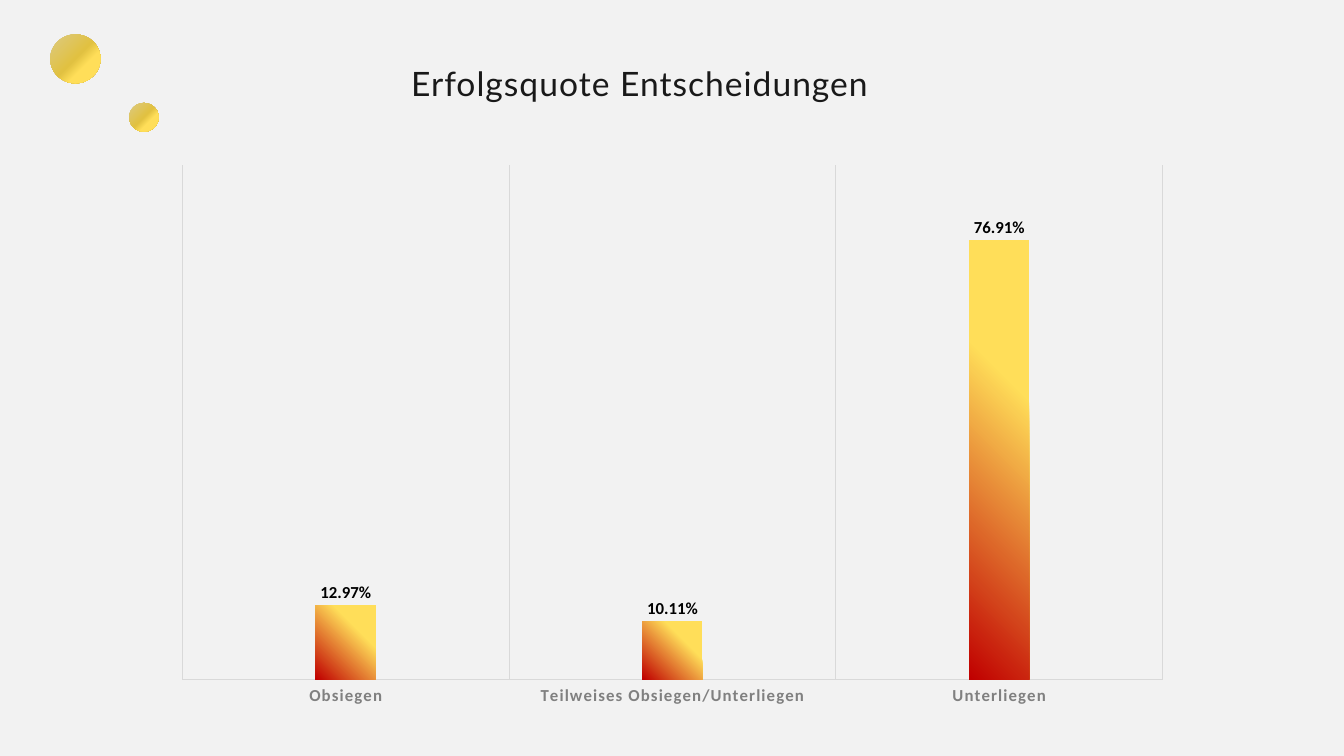
"""Build a slide with a column chart of decision success rates."""
from lxml import etree
from pptx import Presentation
from pptx import util as u
from pptx.chart.data import CategoryChartData
from pptx.dml.color import RGBColor
from pptx.enum import chart as ec, shapes, text
from pptx.oxml import parse_xml
from pptx.oxml.ns import nsdecls, qn


def color(code):
    return RGBColor.from_string(code)


def shade(props, stops, kind):
    for tag in ("a:solidFill", "a:gradFill", "a:noFill"):
        for old in props.findall(qn(tag)):
            props.remove(old)
    marks = "".join(f'<a:gs pos="{pos * 1000}"><a:srgbClr val="{code}"/></a:gs>'
                    for pos, code in stops)
    grad = parse_xml(f'<a:gradFill {nsdecls("a")} rotWithShape="1">'
                     f'<a:gsLst>{marks}</a:gsLst>{kind}</a:gradFill>')
    geom = props.find(qn("a:prstGeom"))
    props.insert(0 if geom is None else props.index(geom) + 1, grad)


prs = Presentation()
prs.slide_width, prs.slide_height = u.Cm(50.8), u.Cm(28.58)
slide = prs.slides.add_slide(prs.slide_layouts[5])
back = slide.background.fill
back.solid()
back.fore_color.rgb = color("F2F2F2")

data = CategoryChartData(number_format="0.00%")
data.categories = ["Obsiegen", "Teilweises Obsiegen/Unterliegen", "Unterliegen"]
data.add_series("Series 1", [0.1297, 0.1011, 0.7691])
chart = slide.shapes.add_chart(ec.XL_CHART_TYPE.COLUMN_CLUSTERED, u.Cm(6.4), u.Cm(5.51),
                               u.Cm(38), u.Cm(21.69), data).chart
chart.has_legend = chart.has_title = False

plot = chart.plots[0]
plot.gap_width, plot.overlap, plot.vary_by_categories = 444, -90, False
plot.has_data_labels = True
labels = plot.data_labels
look = {"show_value": True, "position": ec.XL_LABEL_POSITION.OUTSIDE_END,
        "number_format": "0.00%", "number_format_is_linked": False}
for key, val in look.items():
    setattr(labels, key, val)

cat, axis = chart.category_axis, chart.value_axis
cat.major_tick_mark = ec.XL_TICK_MARK.NONE
cat.tick_label_position = ec.XL_TICK_LABEL_POSITION.LOW
cat.has_major_gridlines = True
for line in (cat.format.line, cat.major_gridlines.format.line):
    line.color.rgb = color("D9D9D9")
    line.width = u.Pt(0.75)
axis.visible = axis.has_major_gridlines = False
axis.minimum_scale, axis.maximum_scale = 0, 0.9

for font, size, bold, code in ((chart.font, 10, False, "000000"),
                               (labels.font, 18, True, "000000"),
                               (cat.tick_labels.font, 18, True, "808080")):
    for key, val in {"name": "Calibri", "size": u.Pt(size), "bold": bold}.items():
        setattr(font, key, val)
    font.color.rgb = color(code)
for props in cat._element.iter(qn("a:defRPr")):
    props.set("spc", "120")

bars = plot.series[0]
bars.format.fill.solid()
shade(bars._element.find(qn("c:spPr")), [(0, "DB9D34"), (0, "C00000"), (68, "FFDE59")],
      '<a:path path="circle"><a:fillToRect t="100000" r="100000"/></a:path>')

area = chart._chartSpace.chart.plotArea
for old in area.findall(qn("c:layout")):
    area.remove(old)
layout = parse_xml(f'<c:layout {nsdecls("c")}><c:manualLayout/></c:layout>')
frame = {"layoutTarget": "inner", "xMode": "edge", "yMode": "edge",
         "x": 0.013, "y": 0.034, "w": 0.975, "h": 0.896}
for key, val in frame.items():
    etree.SubElement(layout[0], qn(f"c:{key}")).set("val", str(val))
area.insert(0, layout)

title = slide.shapes.title
place = {"left": 15.54, "top": 2.24, "width": 19.74, "height": 1.68}
for key, val in place.items():
    setattr(title, key, u.Cm(val))
body = title.text_frame
look = {"margin_left": 0, "margin_top": 0, "margin_right": 0, "margin_bottom": 0,
        "word_wrap": True, "auto_size": text.MSO_AUTO_SIZE.SHAPE_TO_FIT_TEXT,
        "vertical_anchor": text.MSO_ANCHOR.TOP}
for key, val in look.items():
    setattr(body, key, val)
para = body.paragraphs[0]
para.alignment, para.line_spacing = text.PP_ALIGN.LEFT, u.Pt(47.2)
run = para.add_run()
run.text = "Erfolgsquote Entscheidungen"
run.font.name, run.font.size = "Lato", u.Pt(36)
run.font.color.rgb = color("191919")
run._r.get_or_add_rPr().set("spc", "110")

for left, top, width, height in ((1.9, 1.3, 1.9, 1.85), (4.88, 3.89, 1.12, 1.09)):
    dot = slide.shapes.add_shape(shapes.MSO_SHAPE.OVAL, u.Cm(left), u.Cm(top),
                                 u.Cm(width), u.Cm(height))
    dot.shadow.inherit = False
    dot.line.fill.background()
    shade(dot._element.spPr, [(0, "DCCA83"), (50, "E1C141"), (67, "FFDE59")],
          '<a:lin ang="2700000" scaled="0"/>')

prs.save("out.pptx")
